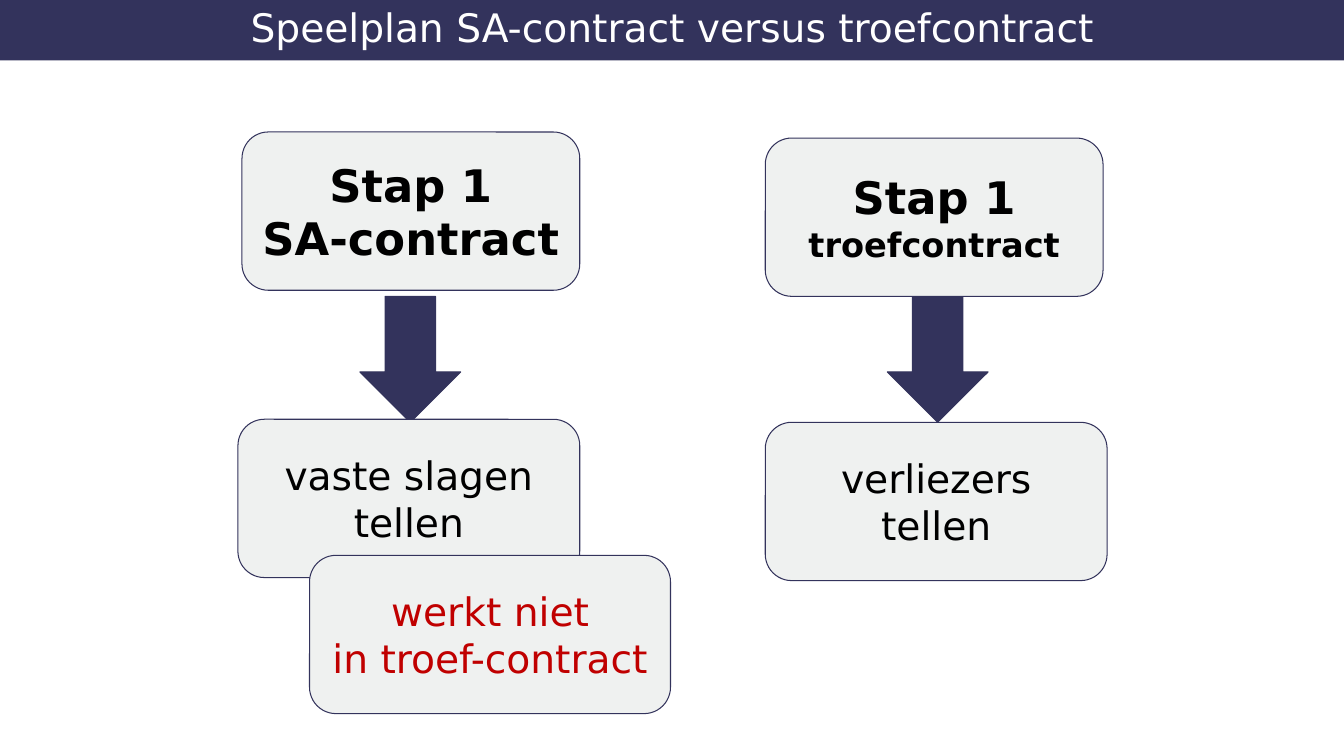
"""Builds a slide comparing step 1 of a no-trump plan with that of a trump plan."""
from pptx import Presentation
from pptx.dml.color import RGBColor
from pptx.enum import shapes, text
from pptx.util import Inches, Pt

NAVY, PALE, BLACK, RED, WHITE = "33335C", "EFF1F0", "000000", "C00000", "FFFFFF"
FONT = "DejaVu Sans"
CARD_HEIGHT = 1.57
STEP_WIDTH, ACTION_WIDTH = 3.35, 3.39


def colour(hex_value):
    """Return the colour for a hex string."""
    return RGBColor.from_string(hex_value)


def style_run(run, size, hex_value, bold=False):
    """Set the font of one run."""
    run.font.name = FONT
    run.font.size = Pt(size)
    run.font.bold = bold
    run.font.color.rgb = colour(hex_value)


def add_block(slide, kind, box, fill, outlined=True):
    """Add a flat preset shape in a box of left, top, width and height."""
    block = slide.shapes.add_shape(kind, *map(Inches, box))
    block.shadow.inherit = False
    block.fill.solid()
    block.fill.fore_color.rgb = colour(fill)
    if outlined:
        block.line.color.rgb = colour(NAVY)
        block.line.width = Pt(0.75)
    else:
        block.line.fill.background()
    return block


def add_card(slide, box, lines, hex_value=BLACK, bold=False):
    """Add a rounded card with centred lines, each a pair of wording and size."""
    card = add_block(slide, shapes.MSO_SHAPE.ROUNDED_RECTANGLE, box, PALE)
    frame = card.text_frame
    frame.word_wrap = True
    frame.vertical_anchor = text.MSO_ANCHOR.MIDDLE
    paragraph = frame.paragraphs[0]
    paragraph.alignment = text.PP_ALIGN.CENTER
    for index, (wording, size) in enumerate(lines):
        if index:
            paragraph.add_line_break()
        run = paragraph.add_run()
        run.text = wording
        style_run(run, size, hex_value, bold)


def add_header(slide, width):
    """Place the title on a navy bar across the top."""
    title = slide.shapes.title
    bar = add_block(slide, shapes.MSO_SHAPE.RECTANGLE, (0, 0, width, 0.6), NAVY, False)
    title._element.addprevious(bar._element)
    title.left, title.top = Inches(0), Inches(-0.02)
    title.width, title.height = Inches(width), Inches(0.62)
    frame = title.text_frame
    frame.word_wrap = True
    frame.vertical_anchor = text.MSO_ANCHOR.MIDDLE
    paragraph = frame.paragraphs[0]
    paragraph.alignment = text.PP_ALIGN.CENTER
    paragraph.line_spacing = 0.95
    run = paragraph.add_run()
    run.text = "Speelplan SA-contract versus troefcontract"
    style_run(run, 28, WHITE)


def add_plan(slide, step_at, arrow_left, action_at, step, action):
    """Add a step card, a down arrow and the action card it leads to."""
    add_block(slide, shapes.MSO_SHAPE.DOWN_ARROW, (arrow_left, 2.94, 1, 1.25), NAVY)
    add_card(slide, (*action_at, ACTION_WIDTH, CARD_HEIGHT), action)
    add_card(slide, (*step_at, STEP_WIDTH, CARD_HEIGHT), step, bold=True)


def main():
    """Build and save the slide."""
    deck = Presentation()
    deck.slide_width, deck.slide_height = Inches(13.33), Inches(7.5)
    slide = deck.slides.add_slide(deck.slide_layouts[5])
    add_header(slide, 13.33)
    add_plan(slide, (2.4, 1.31), 3.57, (2.36, 4.16),
             [("Stap 1", 32), ("SA-contract", 32)],
             [("vaste slagen", 28), ("tellen", 28)])
    add_card(slide, (3.07, 5.51, 3.58, CARD_HEIGHT),
             [("werkt niet", 28), ("in troef-contract", 28)], RED)
    add_plan(slide, (7.59, 1.37), 8.8, (7.59, 4.19),
             [("Stap 1", 32), ("troefcontract", 24)],
             [("verliezers", 28), ("tellen", 28)])
    deck.save("out.pptx")


if __name__ == "__main__":
    main()
